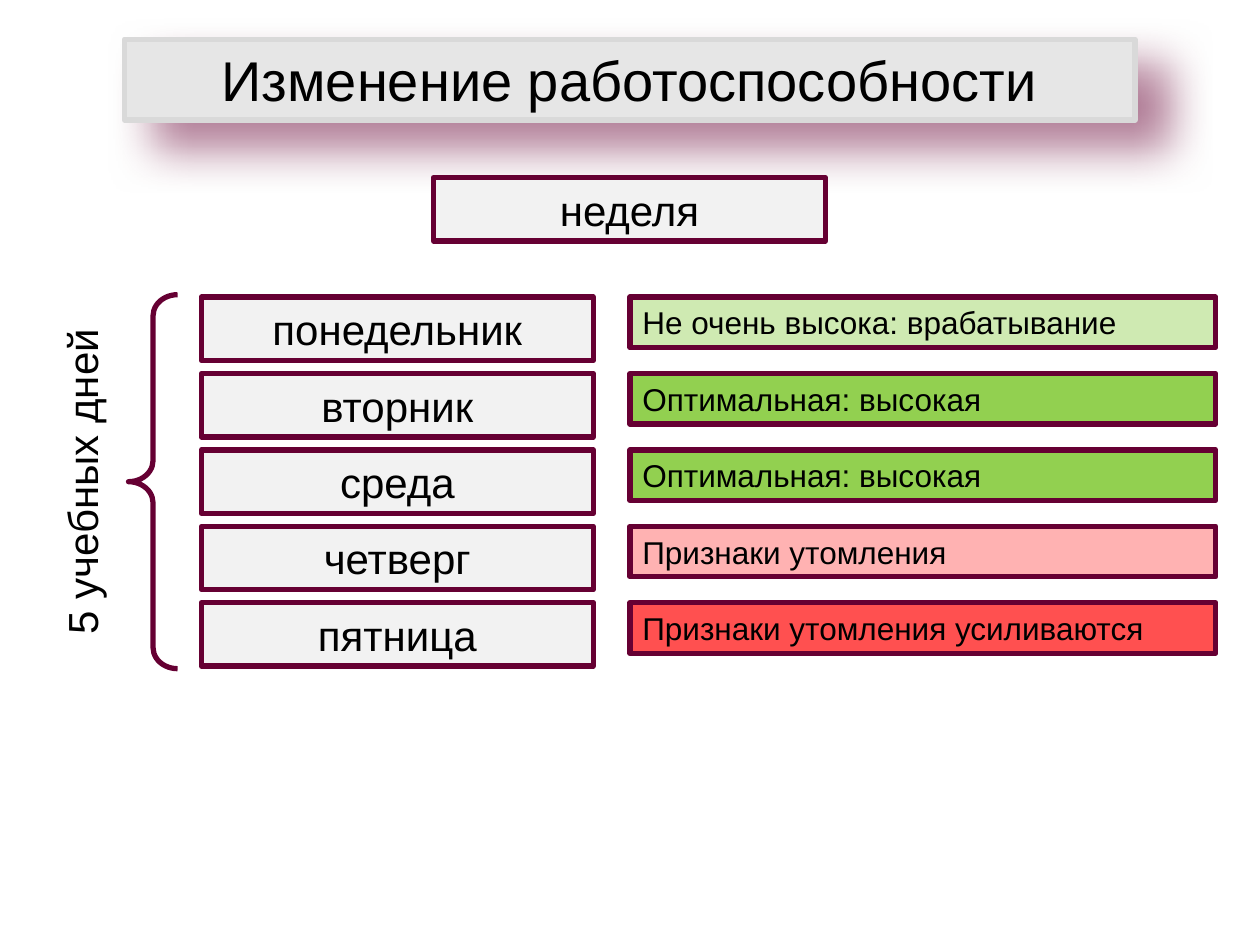
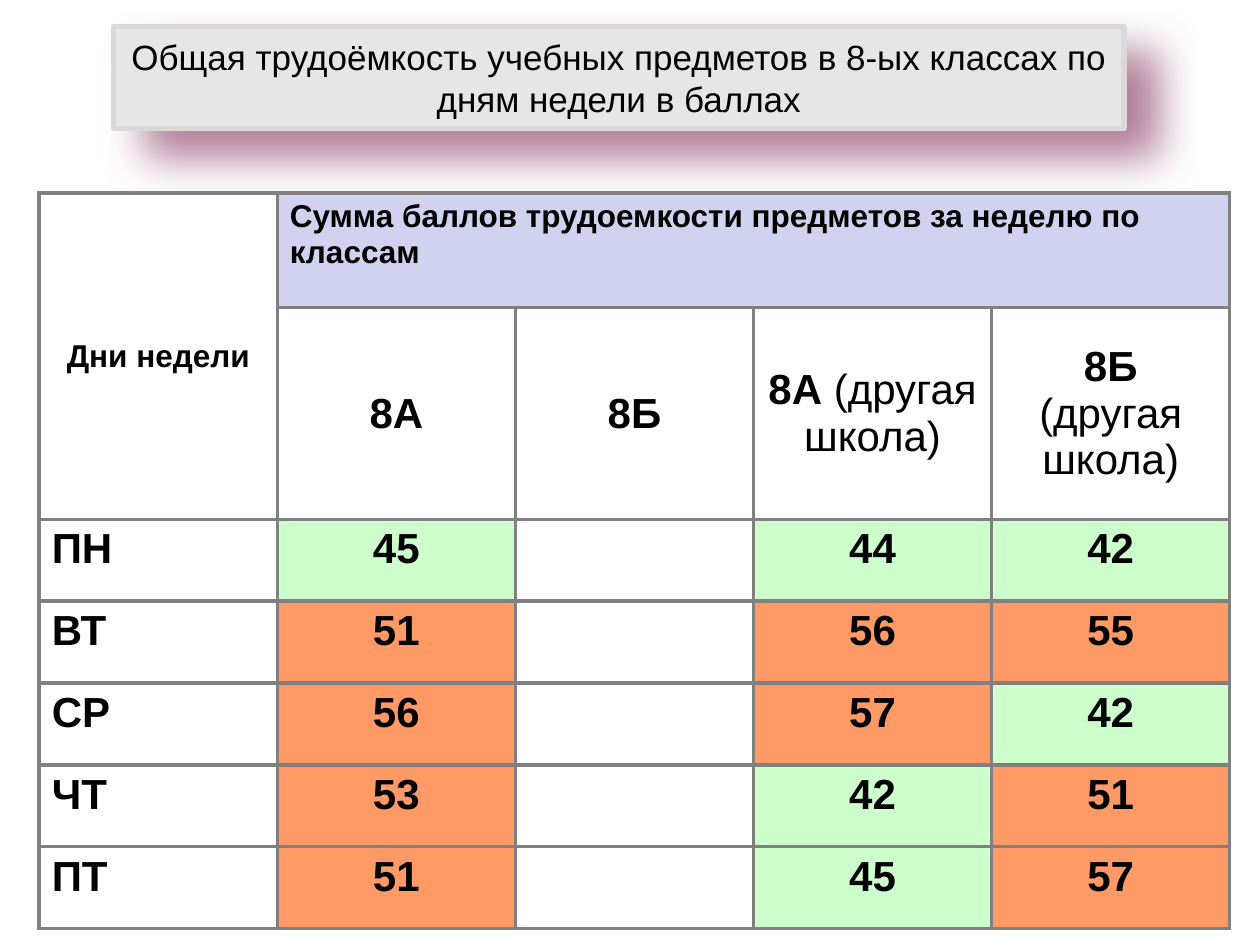
from dataclasses import dataclass

from lxml import etree
from pptx import Presentation
from pptx.dml.color import RGBColor
from pptx.enum.shapes import MSO_SHAPE
from pptx.enum.text import MSO_ANCHOR, PP_ALIGN
from pptx.oxml import parse_xml
from pptx.oxml.ns import nsdecls, qn
from pptx.util import Cm, Pt

RECTANGLE, BRACE = MSO_SHAPE.RECTANGLE, MSO_SHAPE.RIGHT_BRACE
LEFT, CENTER = PP_ALIGN.LEFT, PP_ALIGN.CENTER
TOP, MIDDLE = MSO_ANCHOR.TOP, MSO_ANCHOR.MIDDLE

FONT = "Arial"
COLORS = {
    "text": "000000",
    "white": "FFFFFF",
    "plum": "660033",
    "title_fill": "E6E6E6",
    "title_line": "D9D9D9",
    "box": "F2F2F2",
    "good": "92D050",
    "bad": "FF5050",
    "header": "D1D1F0",
    "light_load": "CCFFCC",
    "heavy_load": "FF9966",
    "grid": "808080",
}
LINE_WIDTH = Pt(3)
FIRST_ROW_TOP, ROW_STEP = 5.99, 1.54
DAY_WIDTH, DAY_HEIGHT = 7.9, 1.28
HEAVY_FROM = 50


@dataclass(frozen=True)
class Area:
    """A place on the slide, in centimetres."""
    left: float
    top: float
    width: float
    height: float

    def lengths(self) -> list:
        return [Cm(n) for n in (self.left, self.top, self.width, self.height)]


@dataclass(frozen=True)
class Span:
    text: str
    size: int
    bold: bool = False


@dataclass(frozen=True)
class Day:
    name: str
    capacity: str
    color: str
    opacity: int = 100


@dataclass(frozen=True)
class Load:
    """Points of one day; None stands for a class without data."""
    day: str
    points: tuple


DAYS = [
    Day("понедельник", "Не очень высока: врабатывание", "good", 44),
    Day("вторник", "Оптимальная: высокая", "good"),
    Day("среда", "Оптимальная: высокая", "good"),
    Day("четверг", "Признаки утомления", "bad", 44),
    Day("пятница", "Признаки утомления усиливаются", "bad"),
]
CLASSES = [
    [[Span("8А", 24, True)]],
    [[Span("8Б", 24, True)]],
    [[Span("8А ", 24, True), Span("(другая школа)", 24)]],
    [[Span("8Б", 24, True)], [Span("(другая школа)", 24)]],
]
LOADS = [
    Load("ПН", (45, None, 44, 42)),
    Load("ВТ", (51, None, 56, 55)),
    Load("СР", (56, None, 57, 42)),
    Load("ЧТ", (53, None, 42, 51)),
    Load("ПТ", (51, None, 45, 57)),
]


def rgb(name: str) -> RGBColor:
    return RGBColor.from_string(COLORS[name])


def write(frame, paragraphs: list, align=CENTER) -> None:
    """Fill a text frame with paragraphs, each a list of spans."""
    for index, spans in enumerate(paragraphs):
        para = frame.add_paragraph() if index else frame.paragraphs[0]
        para.alignment = align
        for span in spans:
            run = para.add_run()
            run.text = span.text
            run.font.name = FONT
            run.font.size = Pt(span.size)
            run.font.bold = span.bold
            run.font.color.rgb = rgb("text")


def paint(shape, fill: str, line: str, opacity: int = 100) -> None:
    shape.fill.solid()
    shape.fill.fore_color.rgb = rgb(fill)
    if opacity < 100:
        color = shape.element.spPr.find(f"{qn('a:solidFill')}/{qn('a:srgbClr')}")
        etree.SubElement(color, qn("a:alpha"), val=str(opacity * 1000))
    shape.line.color.rgb = rgb(line)
    shape.line.width = LINE_WIDTH


def add_title(page, text: str, size: int, area: Area) -> None:
    title = page.shapes.title
    title.left, title.top, title.width, title.height = area.lengths()
    paint(title, "title_fill", "title_line")
    title.element.spPr.append(parse_xml(
        f'<a:effectLst {nsdecls("a")}><a:outerShdw blurRad="{Pt(25)}" dist="{Pt(23)}" '
        f'dir="{40 * 60000}" algn="tl" rotWithShape="0"><a:srgbClr val="{COLORS["plum"]}">'
        '<a:alpha val="50000"/></a:srgbClr></a:outerShdw></a:effectLst>'))
    title.text_frame.word_wrap = True
    title.text_frame.vertical_anchor = MIDDLE
    write(title.text_frame, [[Span(text, size)]])


def add_box(page, area: Area, span: Span, fill: str = "box", opacity: int = 100,
            align=CENTER) -> None:
    box = page.shapes.add_shape(RECTANGLE, *area.lengths())
    box.shadow.inherit = False
    paint(box, fill, "plum", opacity)
    box.text_frame.word_wrap = True
    box.text_frame.vertical_anchor = MIDDLE
    write(box.text_frame, [[span]], align)


def add_week_brace(page) -> None:
    """Draw the brace left of the days and its upright label."""
    brace = page.shapes.add_shape(BRACE, *Area(2.59, 5.94, 0.99, 7.54).lengths())
    brace.rotation = 180
    brace.adjustments[0], brace.adjustments[1] = 0.43, 0.5
    brace.shadow.inherit = False
    brace.fill.background()
    brace.line.color.rgb = rgb("plum")
    brace.line.width = LINE_WIDTH

    label = page.shapes.add_textbox(*Area(-2.31, 9.07, DAY_WIDTH, DAY_HEIGHT).lengths())
    label.rotation = 270
    label.text_frame.word_wrap = True
    label.text_frame.vertical_anchor = MIDDLE
    write(label.text_frame, [[Span("5 учебных дней", 24)]])


def set_borders(cell) -> None:
    properties = cell._tc.get_or_add_tcPr()
    for index, side in enumerate(("lnL", "lnR", "lnT", "lnB")):
        properties.insert(index, parse_xml(
            f'<a:{side} {nsdecls("a")} w="{Pt(2.25)}"><a:solidFill>'
            f'<a:srgbClr val="{COLORS["grid"]}"/></a:solidFill></a:{side}>'))


def fill_cell(cell, paragraphs: list, fill: str = "white", align=CENTER,
              anchor=TOP) -> None:
    cell.fill.solid()
    cell.fill.fore_color.rgb = rgb(fill)
    cell.vertical_anchor = anchor
    write(cell.text_frame, paragraphs, align)


def add_load_table(page) -> None:
    heights = [2.31, 4.27] + [1.65] * len(LOADS)
    columns = len(CLASSES) + 1
    area = Area(0.79, 3.89, 24, sum(heights))
    table = page.shapes.add_table(len(heights), columns, *area.lengths()).table
    for column in table.columns:
        column.width = Cm(area.width / columns)
    for row, height in zip(table.rows, heights):
        row.height = Cm(height)
    for cell in table.iter_cells():
        set_borders(cell)
    table.cell(0, 0).merge(table.cell(1, 0))
    table.cell(0, 1).merge(table.cell(0, columns - 1))

    fill_cell(table.cell(0, 0), [[Span("Дни недели", 18, True)]], anchor=MIDDLE)
    heading = "Сумма баллов трудоемкости предметов за неделю по классам"
    fill_cell(table.cell(0, 1), [[Span(heading, 18, True)]], "header", LEFT)
    for column, name in enumerate(CLASSES, 1):
        fill_cell(table.cell(1, column), name, anchor=MIDDLE)
    for row, load in enumerate(LOADS, 2):
        fill_cell(table.cell(row, 0), [[Span(load.day, 24, True)]], align=LEFT)
        for column, points in enumerate(load.points, 1):
            cell = table.cell(row, column)
            if points is None:
                fill_cell(cell, [])
            else:
                fill = "heavy_load" if points > HEAVY_FROM else "light_load"
                fill_cell(cell, [[Span(str(points), 24, True)]], fill)


def build_week(page) -> None:
    add_title(page, "Изменение работоспособности", 32, Area(2.51, 0.79, 20.37, 1.63))
    add_box(page, Area(8.74, 3.58, DAY_WIDTH, DAY_HEIGHT), Span("неделя", 24))
    add_week_brace(page)
    for index, day in enumerate(DAYS):
        top = FIRST_ROW_TOP + index * ROW_STEP
        add_box(page, Area(4.06, top, DAY_WIDTH, DAY_HEIGHT), Span(day.name, 24))
        add_box(page, Area(12.7, top, 11.81, 1.02), Span(day.capacity, 18),
                day.color, day.opacity, LEFT)


def build_loads(page) -> None:
    add_title(page, "Общая трудоёмкость учебных предметов в 8-ых классах по дням недели в баллах",
              20, Area(2.29, 0.53, 20.37, 2.06))
    add_load_table(page)


def main() -> None:
    deck = Presentation()
    deck.slide_width, deck.slide_height = Cm(25.4), Cm(19.05)
    title_only = deck.slide_layouts[5]
    for build in (build_week, build_loads):
        build(deck.slides.add_slide(title_only))
    deck.save("out.pptx")


if __name__ == "__main__":
    main()
